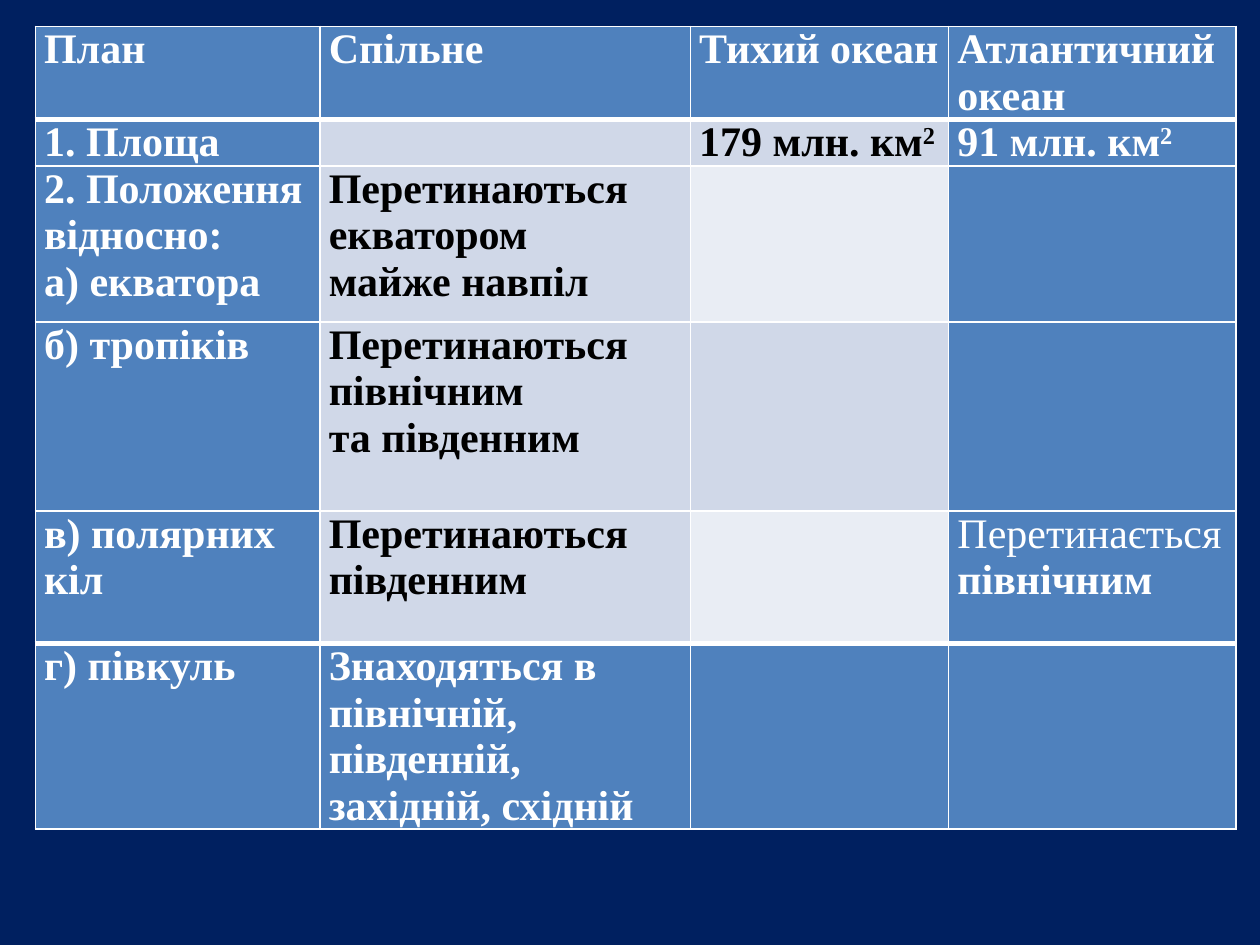
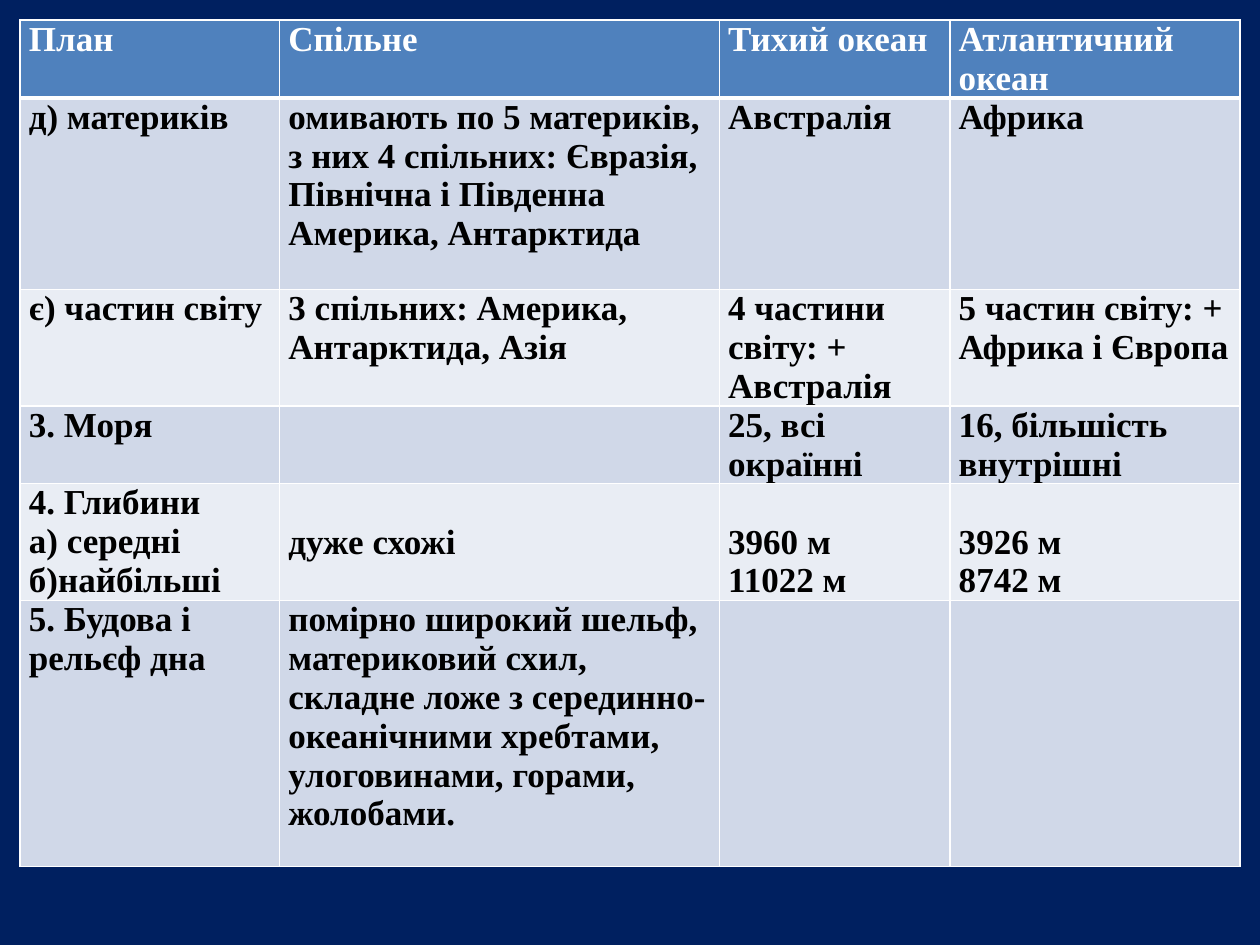
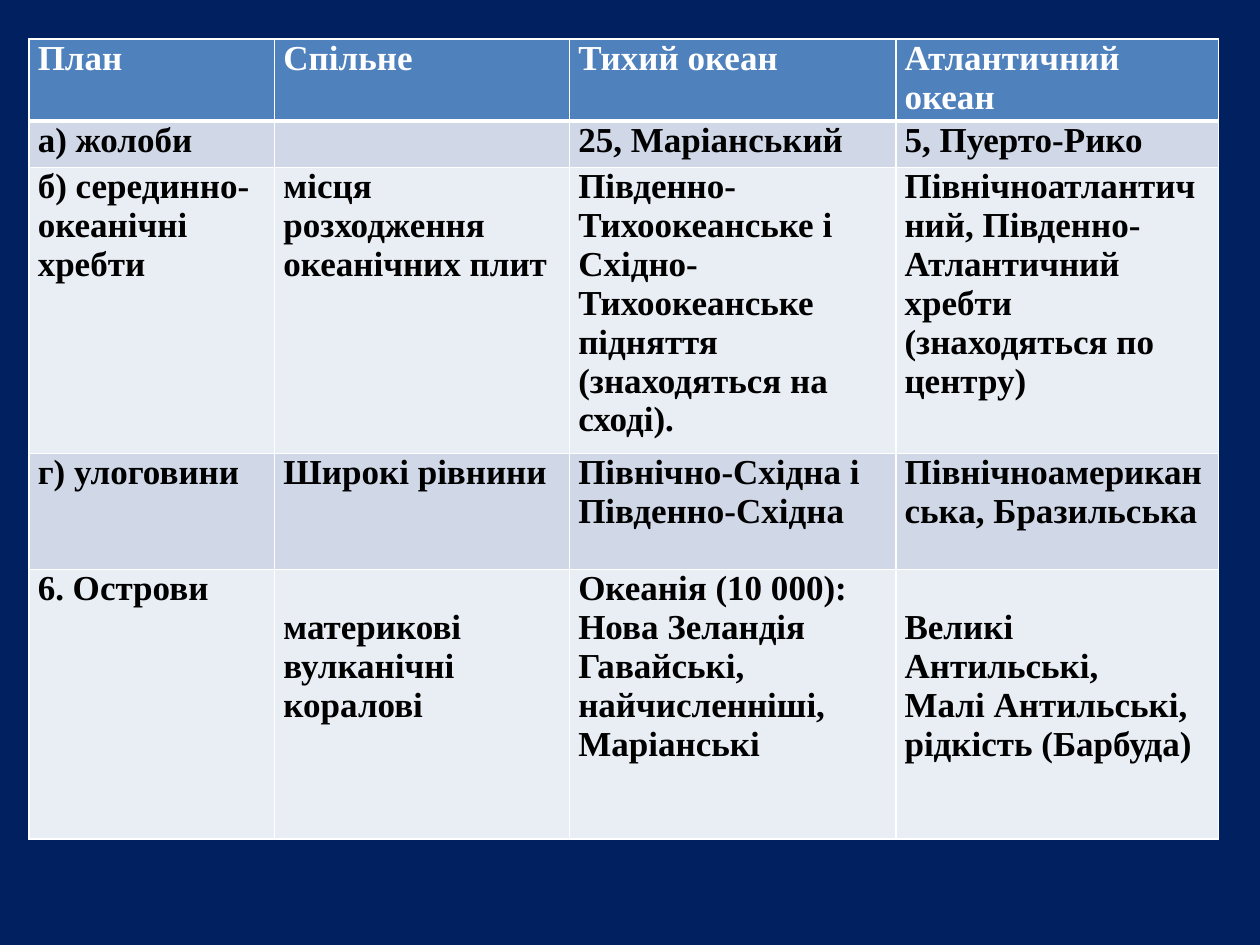
"""Build three slides comparing the Pacific and the Atlantic oceans in tables."""
from lxml import etree
from pptx import Presentation
from pptx.dml.color import RGBColor
from pptx.oxml.ns import qn
from pptx.util import Inches, Pt

COLORS = {
    "background": "002060",
    "accent": "4F81BD",
    "band": "D0D8E8",
    "light": "E9EDF4",
    "border": "FFFFFF",
    "light_text": "FFFFFF",
    "dark_text": "000000",
}
FONT = "Times New Roman"
SIDE_INSET = 0.07
LINE_DROP = 0.31
HEADER = ["План", "Спільне", "Тихий океан", "Атлантичний океан"]

TABLES = [
    {
        "left": 0.28, "top": 0.21, "size": 24,
        "columns": [2.26, 2.94, 2.05, 2.28],
        "rows": [0.7, 0.35, 1.24, 1.5, 1.05, 1.05],
        "accent_columns": {0, 3}, "accent_rows": {0, 5}, "band_columns": {1},
        "thick_borders": {1, 5}, "lowered_cells": set(),
        "body": [
            ["1. Площа", "",
             [("179 млн. км", "bold"), ("2", "superscript")],
             [("91 млн. км", "bold"), ("2", "superscript")]],
            ["2. Положення відносно:\nа) екватора",
             "Перетинаються екватором\nмайже навпіл", "", ""],
            ["б) тропіків", "Перетинаються північним\nта південним", "", ""],
            ["в) полярних кіл", "Перетинаються південним", "",
             [("Перетинається ", "regular"), ("північним", "bold")]],
            ["г) півкуль", "Знаходяться в північній, південній, західній, східній", "", ""],
        ],
    },
    {
        "left": 0.16, "top": 0.16, "size": 20,
        "columns": [2.06, 3.49, 1.83, 2.3],
        "rows": [0.44, 1.52, 0.87, 0.58, 0.87, 2.11],
        "accent_columns": set(), "accent_rows": {0}, "band_columns": set(),
        "thick_borders": {1}, "lowered_cells": {(4, 1), (4, 2), (4, 3)},
        "body": [
            ["д) материків",
             "омивають по 5 материків, з них 4 спільних: Євразія, "
             "Північна і Південна Америка, Антарктида",
             "Австралія", "Африка"],
            ["є) частин світу", "3 спільних: Америка, Антарктида, Азія",
             "4 частини світу: + Австралія", "5 частин світу: + Африка і Європа"],
            ["3. Моря", "", "25, всі окраїнні", "16, більшість внутрішні"],
            ["4. Глибини\nа) середні б)найбільші", "дуже схожі",
             "3960 м\n11022 м", "3926 м\n8742 м"],
            ["5. Будова і рельєф дна",
             "помірно широкий шельф, материковий схил, складне ложе з "
             "серединно-океанічними хребтами, улоговинами, горами, жолобами.",
             "", ""],
        ],
    },
    {
        "left": 0.23, "top": 0.31, "size": 20,
        "columns": [1.95, 2.34, 2.59, 2.56],
        "rows": [0.65, 0.37, 2.27, 0.92, 2.14],
        "accent_columns": set(), "accent_rows": {0}, "band_columns": set(),
        "thick_borders": {1}, "lowered_cells": {(4, 1), (4, 3)},
        "body": [
            ["а) жолоби", "", "25, Маріанський", "5, Пуерто-Рико"],
            ["б) серединно-океанічні хребти", "місця розходження океанічних плит",
             "Південно-Тихоокеанське і Східно-Тихоокеанське підняття "
             "(знаходяться на сході).",
             "Північноатлантичний, Південно-Атлантичний хребти "
             "(знаходяться по центру)"],
            ["г) улоговини", "Широкі рівнини", "Північно-Східна і Південно-Східна",
             "Північноамериканська, Бразильська"],
            ["6. Острови", "материкові\nвулканічні\nкоралові",
             "Океанія (10 000):\nНова Зеландія Гавайські,\nнайчисленніші,\nМаріанські",
             "Великі Антильські,\nМалі Антильські,\nрідкість (Барбуда)"],
        ],
    },
]


def write_cell(cell, content, size, color):
    paragraphs = content
    if isinstance(content, str):
        paragraphs = [[(line, "bold")] for line in content.split("\n") if line]
    else:
        paragraphs = [content]
    for index, runs in enumerate(paragraphs):
        frame = cell.text_frame
        paragraph = frame.add_paragraph() if index else frame.paragraphs[0]
        for text, style in runs:
            run = paragraph.add_run()
            run.text = text
            run.font.name = FONT
            run.font.size = Pt(size)
            run.font.bold = style != "regular"
            run.font.color.rgb = RGBColor.from_string(color)
            if style == "superscript":
                run._r.get_or_add_rPr().set("baseline", "30000")


def add_borders(cell, widths):
    properties = cell._tc.get_or_add_tcPr()
    for side, width in widths.items():
        line = etree.SubElement(properties, qn(f"a:ln{side}"), w=str(Pt(width)))
        fill = etree.SubElement(line, qn("a:solidFill"))
        etree.SubElement(fill, qn("a:srgbClr"), val=COLORS["border"])


presentation = Presentation()
presentation.slide_width = Inches(10)
presentation.slide_height = Inches(7.5)
background = presentation.slide_master.background.fill
background.solid()
background.fore_color.rgb = RGBColor.from_string(COLORS["background"])

for layout in TABLES:
    slide = presentation.slides.add_slide(presentation.slide_layouts[6])
    contents = [HEADER] + layout["body"]
    table = slide.shapes.add_table(
        len(contents), len(HEADER),
        Inches(layout["left"]), Inches(layout["top"]),
        Inches(sum(layout["columns"])), Inches(sum(layout["rows"])),
    ).table
    for column, width in zip(table.columns, layout["columns"]):
        column.width = Inches(width)
    for row, height in zip(table.rows, layout["rows"]):
        row.height = Inches(height)

    for row_index, row_contents in enumerate(contents):
        top_width, bottom_width = [
            3 if border in layout["thick_borders"] else 1
            for border in (row_index, row_index + 1)
        ]
        for column_index, content in enumerate(row_contents):
            cell = table.cell(row_index, column_index)
            lowered = (row_index, column_index) in layout["lowered_cells"]
            cell.margin_left = cell.margin_right = Inches(SIDE_INSET)
            cell.margin_top = Inches(LINE_DROP if lowered else 0)
            cell.margin_bottom = 0
            add_borders(cell, {"L": 1, "R": 1, "T": top_width, "B": bottom_width})

            if row_index in layout["accent_rows"] or column_index in layout["accent_columns"]:
                fill_name, text_name = "accent", "light_text"
            elif row_index % 2 or column_index in layout["band_columns"]:
                fill_name, text_name = "band", "dark_text"
            else:
                fill_name, text_name = "light", "dark_text"
            cell.fill.solid()
            cell.fill.fore_color.rgb = RGBColor.from_string(COLORS[fill_name])
            write_cell(cell, content, layout["size"], COLORS[text_name])

presentation.save("out.pptx")
